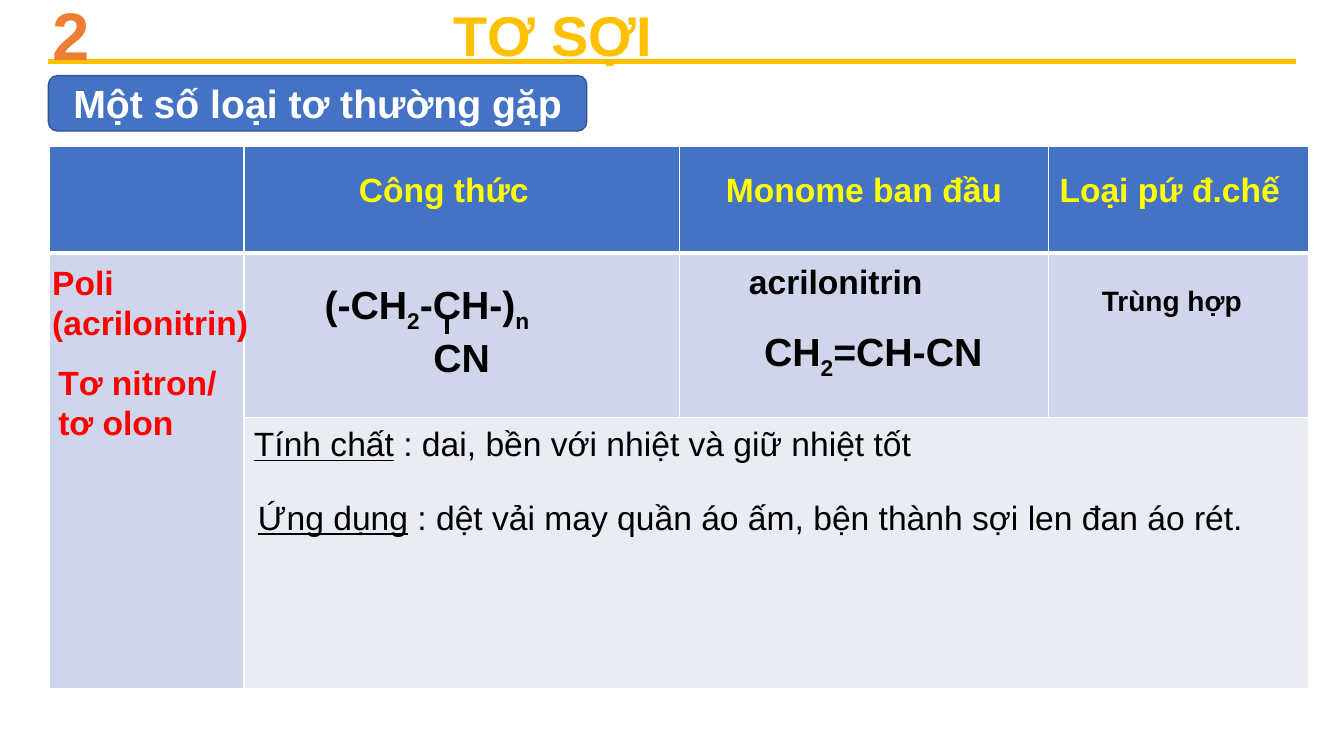
from lxml.etree import SubElement
from pptx import Presentation
from pptx.dml.color import RGBColor as RGB
from pptx.enum.shapes import MSO_CONNECTOR as Link, MSO_SHAPE as Form
from pptx.enum.text import MSO_ANCHOR as Anchor, MSO_AUTO_SIZE as Auto, PP_ALIGN as Align
from pptx.oxml import parse_xml
from pptx.oxml.ns import nsdecls, qn
from pptx.util import Inches, Pt


class Theme:
    font = "Arial"
    white, black, red = "FFFFFF", "000000", "FF0000"
    gold, orange, yellow = "FFC000", "ED7D31", "FFFF00"
    blue, edge, tint, pale = "4472C4", "325491", "CFD5EA", "E9EBF5"
    title, number, large, normal, small = 40, 48, 28, 24, 20


TITLE = "TƠ SỢI"
BADGE = "Một số loại tơ thường gặp"
COLS = [1.93, 4.32, 3.66, 2.58]
ROWS = [1.06, 1.63, 2.69]
FILLS = [Theme.blue, Theme.tint, Theme.pale]
GRID = (0.49, 1.45)

HEADS = [
    ("Công thức", 3.46, 2.32),
    ("Monome ban đầu", 7.1, 2.99),
    ("Loại pứ đ.chế", 10.41, 2.45),
]
NAMES = [
    (["Poli", "(acrilonitrin)"], (0.42, 2.55, 2.17, 0.91)),
    (["Tơ nitron/ tơ olon"], (0.48, 3.54, 1.93, 0.91)),
]
FACTS = [
    ([("Tính chất", "u"), " : dai, bền với nhiệt và giữ nhiệt tốt"],
     (2.42, 4.15, 10.65, 0.5), Align.LEFT),
    ([("Ứng dụng", "u"),
      " : dệt vải may quần áo ấm, bện thành sợi len đan áo rét."],
     (2.46, 4.88, 10.39, 0.5), Align.JUSTIFY),
]
UNIT = ["(-CH", ("2", "sub"), "-CH-)", ("n", "sub")]
MONOMER = ["CH", ("2", "sub"), "=CH-CN"]


def write(shape, paras, size=Theme.normal, color=Theme.black, bold=True,
          align=Align.LEFT, anchor=Anchor.TOP, indents=()):
    frame = shape.text_frame
    frame.word_wrap = True
    frame.auto_size = Auto.NONE
    frame.vertical_anchor = anchor
    for i, runs in enumerate(paras):
        para = frame.paragraphs[0] if i == 0 else frame.add_paragraph()
        para.alignment = align
        para.line_spacing = 1.0
        para.space_before = Pt(0)
        if i < len(indents):
            para._p.get_or_add_pPr().set("marL", str(Inches(indents[i])))
        for part in [runs] if isinstance(runs, str) else runs:
            text, mark = (part, "") if isinstance(part, str) else part
            run = para.add_run()
            run.text = text
            font = run.font
            font.name, font.size, font.bold = Theme.font, Pt(size), bold
            font.color.rgb = RGB.from_string(color)
            if mark == "u":
                font.underline = True
            if mark == "sub":
                run._r.get_or_add_rPr().set("baseline", "-25000")


def place(shape, at):
    shape.left, shape.top, shape.width, shape.height = map(Inches, at)


def label(slide, paras, at, **style):
    write(slide.shapes.add_textbox(*map(Inches, at)), paras, **style)


def rule(slide, start, end, color):
    line = slide.shapes.add_connector(Link.STRAIGHT, *map(Inches, start + end))
    line.line.color.rgb = RGB.from_string(color)
    line.line.width = Pt(3)
    SubElement(line._element.spPr, qn("a:effectLst"))


def border(cell, row):
    widths = {"L": 1, "R": 1, "T": 3 if row == 1 else 1, "B": 3 if row == 0 else 1}
    props = cell._tc.get_or_add_tcPr()
    for i, (side, width) in enumerate(widths.items()):
        props.insert(i, parse_xml(
            f'<a:ln{side} {nsdecls("a")} w="{Pt(width)}"><a:solidFill>'
            f'<a:srgbClr val="{Theme.white}"/></a:solidFill></a:ln{side}>'))


def grid(slide):
    size = (sum(COLS), sum(ROWS))
    table = slide.shapes.add_table(
        len(ROWS), len(COLS), *map(Inches, GRID + size)).table
    for col, width in zip(table.columns, COLS):
        col.width = Inches(width)
    for r, height in enumerate(ROWS):
        table.rows[r].height = Inches(height)
        for c in range(len(COLS)):
            cell = table.cell(r, c)
            cell.fill.solid()
            shade = Theme.tint if r and c == 0 else FILLS[r]
            cell.fill.fore_color.rgb = RGB.from_string(shade)
            border(cell, r)
    table.cell(1, 0).merge(table.cell(2, 0))
    table.cell(2, 1).merge(table.cell(2, 3))


def badge(slide):
    box = slide.shapes.add_shape(
        Form.ROUNDED_RECTANGLE, *map(Inches, (0.48, 0.75, 5.34, 0.55)))
    box.shadow.inherit = False
    box.fill.solid()
    box.fill.fore_color.rgb = RGB.from_string(Theme.blue)
    box.line.color.rgb = RGB.from_string(Theme.edge)
    box.line.width = Pt(1)
    write(box, [BADGE], size=Theme.large, color=Theme.white,
          align=Align.CENTER, anchor=Anchor.MIDDLE)


def main():
    deck = Presentation()
    deck.slide_width, deck.slide_height = Inches(13.33), Inches(7.5)
    slide = deck.slides.add_slide(deck.slide_layouts[5])
    grid(slide)
    rule(slide, (0.48, 0.61), (12.85, 0.61), Theme.gold)
    label(slide, ["2"], (0.42, -0.12, 0.7, 0.91),
          size=Theme.number, color=Theme.orange)
    title = slide.shapes.title
    place(title, (4.4, -0.04, 3.52, 0.77))
    write(title, [TITLE], size=Theme.title, color=Theme.gold)
    badge(slide)
    for text, left, width in HEADS:
        label(slide, [text], (left, 1.63, width, 0.5), color=Theme.yellow)
    for paras, at in NAMES:
        label(slide, paras, at, color=Theme.red)
    for runs, at, align in FACTS:
        label(slide, [runs], at, bold=False, align=align)
    label(slide, ["Trùng hợp"], (10.83, 2.76, 2.01, 0.44), size=Theme.small)
    label(slide, ["acrilonitrin"], (7.33, 2.54, 2.67, 0.5))
    label(slide, [MONOMER], (7.48, 3.2, 2.61, 0.57), size=Theme.large)
    label(slide, [UNIT, "CN"], (3.12, 2.73, 2.61, 1.04),
          size=Theme.large, indents=(0, 1.08))
    rule(slide, (4.43, 3.16), (4.43, 3.31), Theme.black)
    deck.save("out.pptx")


if __name__ == "__main__":
    main()
